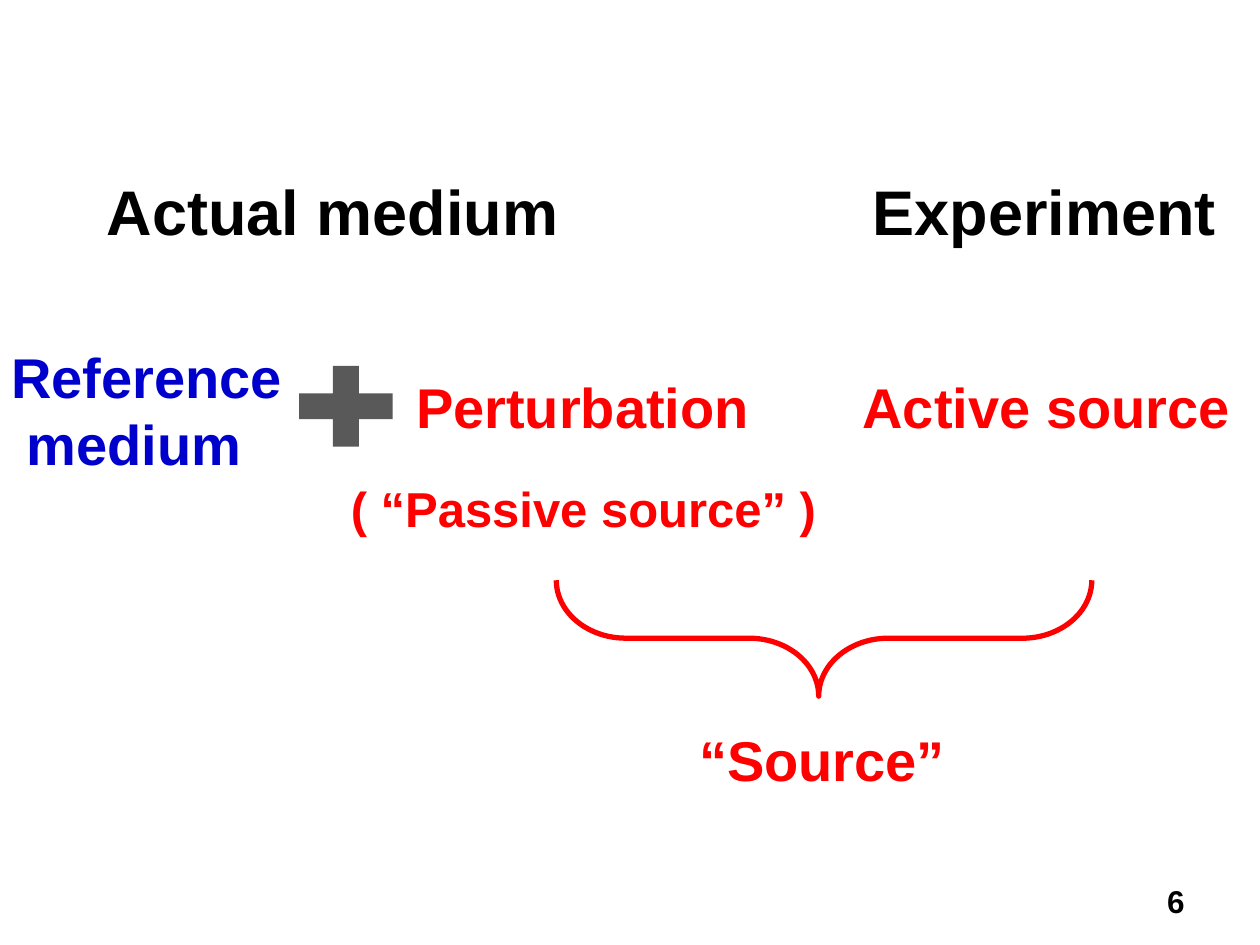
from dataclasses import dataclass

from pptx import Presentation
from pptx.dml.color import RGBColor
from pptx.enum.shapes import MSO_SHAPE as Preset
from pptx.enum.text import MSO_ANCHOR as Anchor
from pptx.enum.text import MSO_AUTO_SIZE as AutoSize
from pptx.enum.text import PP_ALIGN as Align
from pptx.shapes.autoshape import Shape
from pptx.slide import Slide
from pptx.util import Inches, Pt

WIDTH, HEIGHT = Inches(10), Inches(7.5)
BLACK, BLUE, RED, GREY = "000000", "0000CC", "FF0000", "595959"
HEADING_ROW, HEADING_HEIGHT = 17.6, 9.47
TERM_ROW, TERM_HEIGHT = 38.8, 8.53


@dataclass(frozen=True)
class Frame:
    """A rectangle in percent of the slide's width and height."""

    left: float
    top: float
    width: float
    height: float

    def lengths(self) -> tuple[int, int, int, int]:
        """Return left, top, width and height as slide lengths."""
        return (
            round(WIDTH * self.left / 100),
            round(HEIGHT * self.top / 100),
            round(WIDTH * self.width / 100),
            round(HEIGHT * self.height / 100),
        )


@dataclass(frozen=True)
class Label:
    """A bold text with its place and style."""

    lines: tuple[str, ...]
    frame: Frame
    size: int = 32
    colour: str = RED
    align: Align = Align.CENTER
    anchor: Anchor = Anchor.TOP
    wrap: bool = True
    grow: bool = True


LABELS = (
    Label(("Actual medium ",), Frame(4.2, HEADING_ROW, 45.8, HEADING_HEIGHT), 36, BLACK),
    Label(("Experiment",), Frame(65.8, HEADING_ROW, 34.2, HEADING_HEIGHT), 36, BLACK),
    Label(("Reference", " medium"), Frame(-0.1, 35.6, 23.7, 15.73),
          colour=BLUE, align=Align.LEFT, wrap=False),
    Label(("Perturbation",), Frame(31.7, TERM_ROW, 29.1, TERM_HEIGHT)),
    Label(("Active source",), Frame(66.1, TERM_ROW, 33.9, TERM_HEIGHT)),
    Label(("( “Passive source” )",), Frame(26.6, 50, 39.4, 7.6), 28, wrap=False),
    Label(("“Source”",), Frame(48.3, 76.13, 33.9, TERM_HEIGHT)),
    Label(("6",), Frame(71.7, 92.67, 23.3, 5.33), 18, BLACK,
          Align.RIGHT, Anchor.MIDDLE, grow=False),
)


def rgb(colour: str) -> RGBColor:
    """Turn a hex string into a colour."""
    return RGBColor.from_string(colour)


def add_label(page: Slide, label: Label) -> None:
    """Write a label on the page."""
    text = page.shapes.add_textbox(*label.frame.lengths()).text_frame
    text.word_wrap = label.wrap
    text.auto_size = AutoSize.SHAPE_TO_FIT_TEXT if label.grow else AutoSize.NONE
    text.vertical_anchor = label.anchor
    text.text = "\n".join(label.lines)
    for para in text.paragraphs:
        para.alignment = label.align
        para.font.name = "Arial"
        para.font.size = Pt(label.size)
        para.font.bold = True
        para.font.color.rgb = rgb(label.colour)


def add_preset(page: Slide, preset: Preset, frame: Frame) -> Shape:
    """Add a preset shape without a shadow."""
    shape = page.shapes.add_shape(preset, *frame.lengths())
    shape.shadow.inherit = False
    return shape


def add_plus(page: Slide, frame: Frame) -> None:
    """Draw the plus sign between the reference and the perturbation."""
    plus = add_preset(page, Preset.MATH_PLUS, frame)
    plus.fill.solid()
    plus.fill.fore_color.rgb = rgb(GREY)
    plus.line.fill.background()


def add_brace(page: Slide, frame: Frame) -> None:
    """Draw the brace that joins both sources, its tip pointing down."""
    brace = add_preset(page, Preset.RIGHT_BRACE, frame)
    brace.rotation = 90
    brace.adjustments[0] = 0.6
    brace.adjustments[1] = 0.51
    brace.fill.background()
    brace.line.color.rgb = rgb(RED)
    brace.line.width = Pt(3)


def main() -> None:
    """Build and save the deck."""
    deck = Presentation()
    deck.slide_width, deck.slide_height = WIDTH, HEIGHT
    page = deck.slides.add_slide(deck.slide_layouts[6])
    for label in LABELS:
        add_label(page, label)
    add_plus(page, Frame(22.4, 37.2, 10.1, 11.6))
    add_brace(page, Frame(60.8, 39.2, 9.2, 56.67))
    deck.save("out.pptx")


if __name__ == "__main__":
    main()
